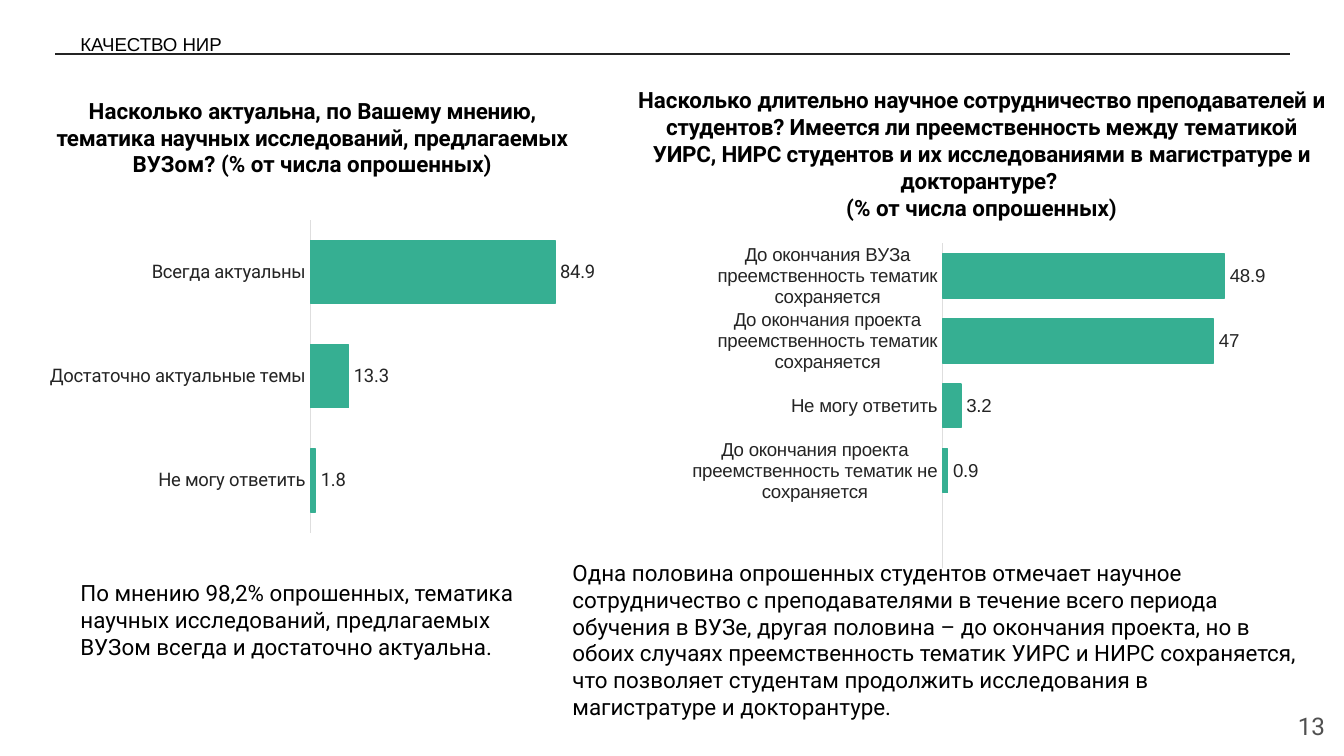
from dataclasses import dataclass
from itertools import cycle

from lxml import etree
from pptx import Presentation
from pptx import util as u
from pptx.chart import data as cd
from pptx.dml import color as col
from pptx.enum import chart as ch, shapes, text
from pptx.oxml import ns


@dataclass(frozen=True)
class Theme:
    ink: str = "000000"
    label: str = "242424"
    number: str = "505050"
    axis: str = "DEDEDE"
    bar: str = "36AF92"
    sans: str = "Roboto"
    plain: str = "Arial"
    body: float = 12
    small: float = 10
    page: float = 13
    rule: float = 0.75


T = Theme()
TIGHT = -10
AL = text.PP_ALIGN
ANCHOR = text.MSO_ANCHOR


def rgb(value):
    return col.RGBColor.from_string(value)


def style_font(f, size, color, name, bold=False):
    f.size = u.Pt(size)
    f.name = name
    f.bold = bold
    f.color.rgb = rgb(color)


def style_line(line, color):
    line.color.rgb = rgb(color)
    line.width = u.Pt(T.rule)


def add_text(s, box, paragraphs, size=T.body, color=T.ink, font=T.sans, bold=False,
             align=AL.LEFT, anchor=ANCHOR.TOP, indent=0):
    tf = s.shapes.add_textbox(*map(u.Cm, box)).text_frame
    tf.word_wrap = True
    tf.vertical_anchor = anchor
    for i, runs in enumerate(paragraphs):
        p = tf.add_paragraph() if i else tf.paragraphs[0]
        p.alignment = align
        if indent:
            p._p.get_or_add_pPr().set("marL", str(u.Cm(indent)))
        for words, spacing in zip(runs, cycle((0, TIGHT))):
            r = p.add_run()
            r.text = words
            style_font(r.font, size, color, font, bold)
            if spacing:
                r._r.get_or_add_rPr().set("spc", str(spacing))
    return tf


def add_question(s, box, paragraphs):
    add_text(s, box, paragraphs, bold=True, align=AL.CENTER,
             anchor=ANCHOR.BOTTOM, indent=0.18)


def add_rule(s, x1, x2, y):
    c = s.shapes.add_connector(shapes.MSO_CONNECTOR.STRAIGHT,
                               u.Cm(x1), u.Cm(y), u.Cm(x2), u.Cm(y))
    style_line(c.line, T.label)
    etree.SubElement(c._element.spPr, ns.qn("a:effectLst"))


def set_plot_area(chart, x, y, w, h):
    area = chart._chartSpace.chart.plotArea
    for old in area.findall(ns.qn("c:layout")):
        area.remove(old)
    layout = etree.Element(ns.qn("c:layout"))
    manual = etree.SubElement(layout, ns.qn("c:manualLayout"))
    values = {"layoutTarget": "inner", "xMode": "edge", "yMode": "edge",
              "x": x, "y": y, "w": w, "h": h}
    for tag, value in values.items():
        etree.SubElement(manual, ns.qn(f"c:{tag}")).set("val", str(value))
    area.insert(0, layout)


def add_bars(s, box, answers, font, gap, top, plot_area):
    data = cd.CategoryChartData()
    data.categories = [name for name, _ in answers]
    data.add_series("Series 1", [value for _, value in answers])
    chart = s.shapes.add_chart(ch.XL_CHART_TYPE.BAR_CLUSTERED,
                               *map(u.Cm, box), data).chart
    chart.has_legend = False
    chart.has_title = False
    style_font(chart.font, T.small, T.label, font)
    set_plot_area(chart, *plot_area)

    axis = chart.category_axis
    axis.major_tick_mark = axis.minor_tick_mark = ch.XL_TICK_MARK.NONE
    axis.has_major_gridlines = False
    style_line(axis.format.line, T.axis)
    style_font(axis.tick_labels.font, T.small, T.label, font)
    scale = chart.value_axis
    scale.visible = False
    scale.has_major_gridlines = False
    scale.minimum_scale, scale.maximum_scale = 0, top

    plot = chart.plots[0]
    plot.gap_width = gap
    plot.vary_by_categories = False
    series = plot.series[0]
    series.format.fill.solid()
    series.format.fill.fore_color.rgb = rgb(T.bar)
    style_line(series.format.line, T.bar)
    labels = series.data_labels
    labels.show_value = True
    labels.position = ch.XL_LABEL_POSITION.OUTSIDE_END
    style_font(labels.font, T.small, T.label, font)


def main():
    prs = Presentation()
    prs.slide_width, prs.slide_height = u.Cm(25.4), u.Cm(14.29)
    s = prs.slides.add_slide(prs.slide_layouts[6])

    add_rule(s, 1.04, 24.38, 1.02)
    tf = add_text(s, (23.77, 13.18, 1.52, 1.09), [["13"]], T.page, T.number,
                  align=AL.RIGHT, anchor=ANCHOR.MIDDLE)
    tf.margin_top = tf.margin_bottom = u.Cm(0.25)

    add_question(s, (11.63, 0.97, 13.67, 3.33), [
        ["Насколько ", "длительно научное сотрудничество преподавателей ",
         "и ", "студентов? Имеется ли преемственность между ",
         "тематикой ", "УИРС, НИРС студентов ", "и их ", "исследованиями ",
         "в ", "магистратуре ", "и ", "докторантуре? "],
        ["(% от числа опрошенных)"]])
    add_text(s, (1.27, 0.05, 12.37, 1.12), [["КАЧЕСТВО НИР"]], T.small,
             font=T.plain, anchor=ANCHOR.BOTTOM)
    add_question(s, (0.38, 1.17, 10.87, 2.31), [
        ["Насколько ", "актуальна, ", "по ",
         "Вашему мнению, тематика научных исследований, предлагаемых ",
         "ВУЗом? (% от числа опрошенных)"]])

    add_bars(s, (0.94, 3.89, 10.31, 6.55), [
        ("Не могу ответить", 1.8),
        ("Достаточно актуальные темы", 13.3),
        ("Всегда актуальны", 84.9),
    ], T.sans, 66, 91, (0.481, 0.04, 0.487, 0.904))
    add_bars(s, (12.7, 4.29, 12.09, 6.55), [
        ("", None),
        ("До окончания проекта преемственность тематик не сохраняется", 0.9),
        ("Не могу ответить", 3.2),
        ("До окончания проекта преемственность тематик сохраняется", 47),
        ("До окончания ВУЗа преемственность тематик сохраняется", 48.9),
    ], T.plain, 48, 60, (0.423, 0.048, 0.541, 0.937))

    add_text(s, (1.27, 10.82, 9.3, 1.8), [[
        "По мнению 98,2% опрошенных, тематика научных исследований, "
        "предлагаемых ВУЗом всегда и достаточно актуальна."]])
    add_text(s, (10.57, 10.44, 14.22, 3.84), [[
        "Одна половина опрошенных студентов отмечает научное сотрудничество "
        "с преподавателями в течение всего периода обучения в ВУЗе, другая "
        "половина – до окончания проекта, но в обоих случаях преемственность "
        "тематик УИРС и НИРС сохраняется, что позволяет студентам продолжить "
        "исследования в магистратуре и докторантуре."]])

    prs.save("out.pptx")


if __name__ == "__main__":
    main()
